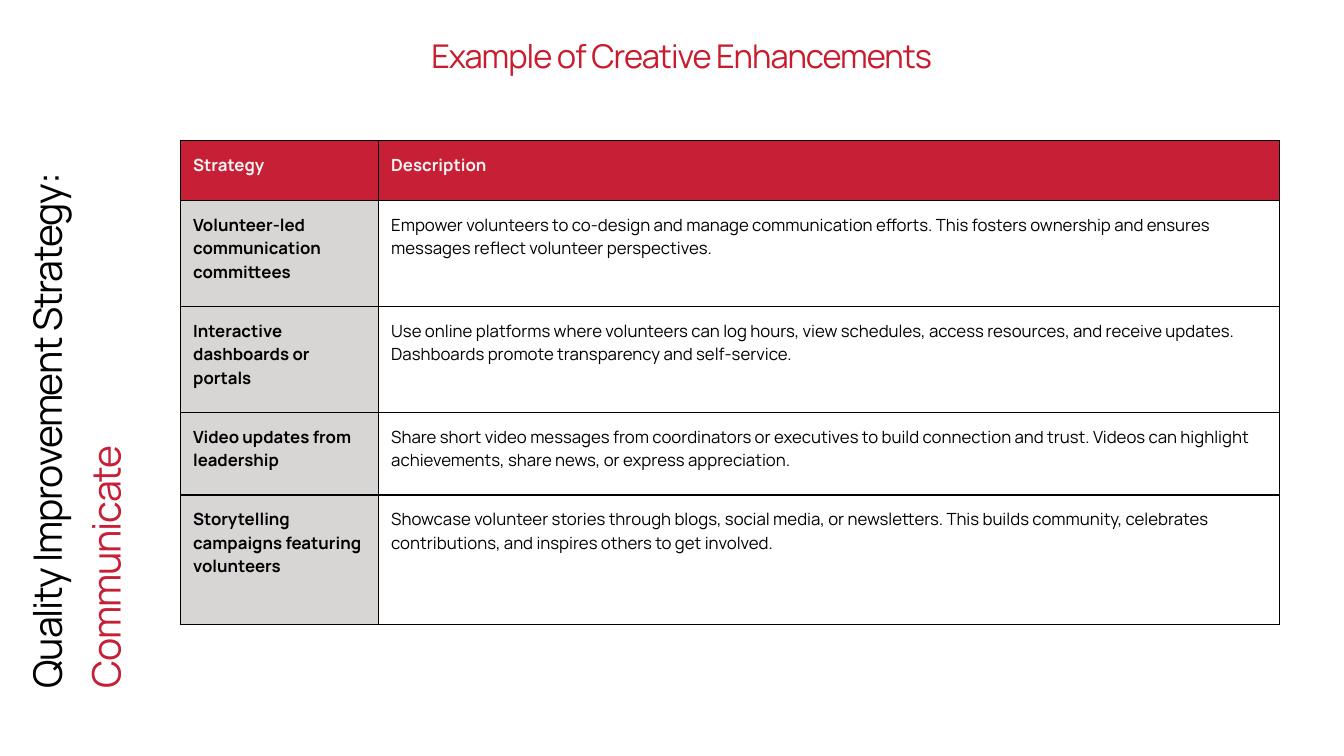
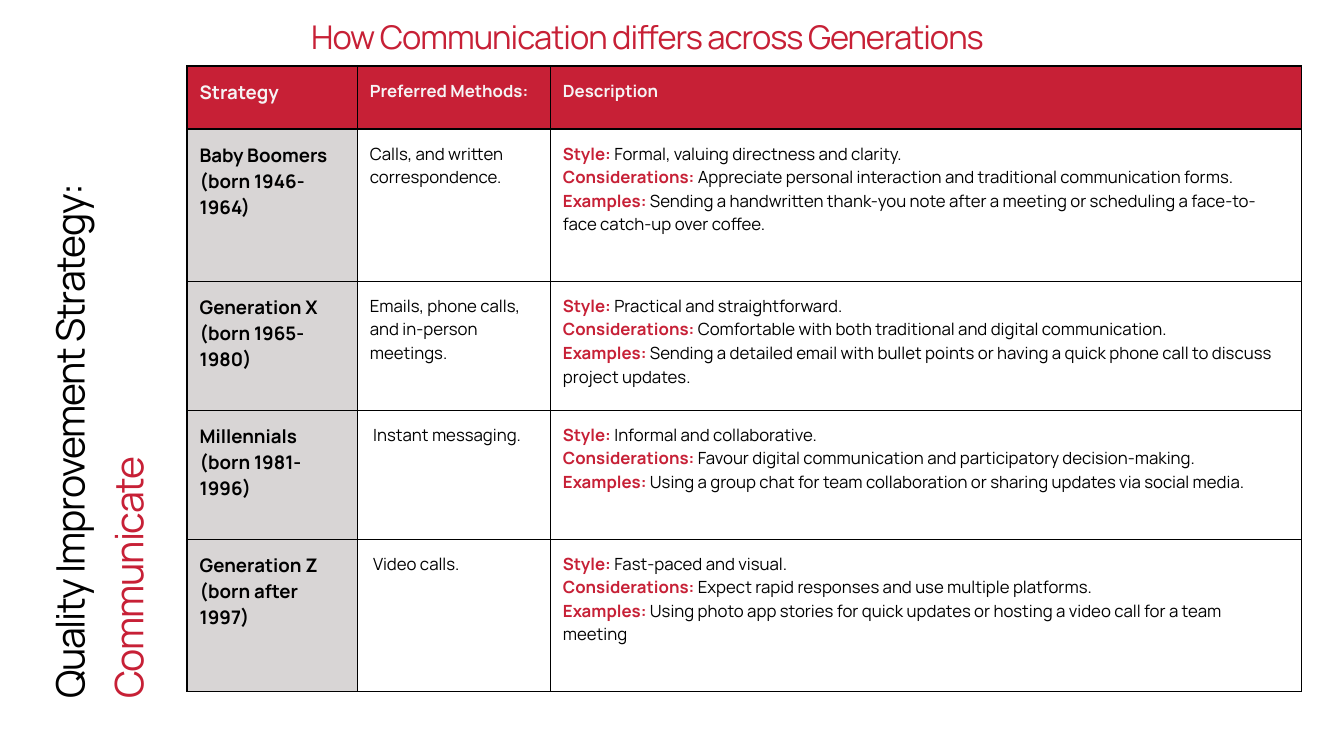
import pptx
import pptx.dml.color
import pptx.enum.text
import pptx.oxml
import pptx.oxml.ns
import pptx.util
from dataclasses import dataclass

Pt = pptx.util.Pt

# Content
SIDE_TITLE = ("Quality Improvement Strategy: ", "Communicate")
DETAIL_LABELS = ("Style: ", "Considerations: ", "Examples: ")

ENHANCEMENTS = [
    ("Strategy", "Description"),
    ("Volunteer-led communication committees",
     "Empower volunteers to co-design and manage communication efforts. "
     "This fosters ownership and ensures messages reflect volunteer perspectives."),
    ("Interactive dashboards or portals",
     "Use online platforms where volunteers can log hours, view schedules, access resources, "
     "and receive updates. Dashboards promote transparency and self-service."),
    ("Video updates from leadership",
     "Share short video messages from coordinators or executives to build connection and trust. "
     "Videos can highlight achievements, share news, or express appreciation."),
    ("Storytelling campaigns featuring volunteers",
     "Showcase volunteer stories through blogs, social media, or newsletters. "
     "This builds community, celebrates contributions, and inspires others to get involved."),
]

# A tuple in a cell holds one text per detail label
GENERATIONS = [
    ("Strategy", "Preferred Methods:", "Description"),
    ("Baby Boomers (born 1946-1964)", "Calls, and written correspondence.",
     ("Formal, valuing directness and clarity.",
      "Appreciate personal interaction and traditional communication forms.",
      "Sending a handwritten thank-you note after a meeting or scheduling "
      "a face-to-face catch-up over coffee.")),
    ("Generation X (born 1965-1980)", "Emails, phone calls, and in-person meetings.",
     ("Practical and straightforward.",
      "Comfortable with both traditional and digital communication.",
      "Sending a detailed email with bullet points or having a quick phone call "
      "to discuss project updates.")),
    ("Millennials (born 1981-1996)", " Instant messaging.",
     ("Informal and collaborative.",
      "Favour digital communication and participatory decision-making.",
      "Using a group chat for team collaboration or sharing updates via social media.")),
    ("Generation Z (born after 1997)", " Video calls.",
     ("Fast-paced and visual.",
      "Expect rapid responses and use multiple platforms.",
      "Using photo app stories for quick updates or hosting a video call for a team meeting")),
]

# Places in points: boxes are left, top, width, height
PAGES = [
    dict(title="Example of Creative Enhancements", title_color="C81C2C",
         title_box=(462.2, 35.3, 639.4, 91.4), side_box=(-235.4, 364.3, 620, 126),
         rows=ENHANCEMENTS, corner=(193.5, 150.5), first_size=18,
         widths=(212.2, 965.6), heights=(64, 113.7, 113.7, 88.4, 138.8)),
    dict(title="How Communication differs across Generations", title_color="C72036",
         title_box=(333.4, 14.4, 877, 46.8), side_box=(-210.2, 376.6, 618.5, 126),
         rows=GENERATIONS, corner=(200.4, 70.8), first_size=20,
         widths=(182.4, 206.9, 804.4), heights=(67.5, 163.2, 138.2, 138.2, 163.2)),
]


@dataclass(frozen=True)
class Theme:
    font: str = "Manrope"
    red: str = "C72036"
    gray: str = "D8D5D5"
    black: str = "000000"
    light: str = "F6F4F5"
    side_size: float = 42
    title_size: float = 35
    body_size: float = 18
    cell_leading: float = 1.4
    title_leading: float = 1.3
    side_leading: float = 1.5
    inset: float = 13.5
    border: float = 1.5


THEME = Theme()


def rgb(value):
    return pptx.dml.color.RGBColor.from_string(value)


def add_span(para, text, size, color, bold=False, tracking=None):
    span = para.add_run()
    span.text = text
    font = span.font
    font.name, font.size, font.bold = THEME.font, Pt(size), bold
    font.color.rgb = rgb(color)
    if tracking:
        span._r.get_or_add_rPr().set("spc", str(round(tracking * 100)))


def add_heading(page, place, spans, size, leading, tracking, rotation=0):
    box = page.shapes.add_textbox(*map(Pt, place))
    box.rotation = rotation
    frame = box.text_frame
    frame.word_wrap = True
    frame.auto_size = pptx.enum.text.MSO_AUTO_SIZE.SHAPE_TO_FIT_TEXT
    frame.margin_left = frame.margin_right = frame.margin_top = frame.margin_bottom = 0
    para = frame.paragraphs[0]
    para.line_spacing = Pt(size * leading)
    for text, color in spans:
        add_span(para, text, size, color, tracking=tracking)


def style_cell(cell, fill):
    cell.margin_left = cell.margin_right = Pt(THEME.inset)
    cell.margin_top = cell.margin_bottom = Pt(THEME.inset)
    # Borders come before the fill in the cell properties
    properties = cell._tc.get_or_add_tcPr()
    for side in ("lnL", "lnR", "lnT", "lnB"):
        properties.append(pptx.oxml.parse_xml(
            f'<a:{side} {pptx.oxml.ns.nsdecls("a")} w="{Pt(THEME.border)}">'
            f'<a:solidFill><a:srgbClr val="{THEME.black}"/></a:solidFill></a:{side}>'))
    if fill:
        cell.fill.solid()
        cell.fill.fore_color.rgb = rgb(fill)
    else:
        cell.fill.background()


def write_cell(cell, content, size, color, bold):
    if isinstance(content, tuple):
        lines = [[(label, THEME.red, True), (text, color, False)]
                 for label, text in zip(DETAIL_LABELS, content)]
    else:
        lines = [[(content, color, bold)]]
    frame = cell.text_frame
    for index, spans in enumerate(lines):
        para = frame.add_paragraph() if index else frame.paragraphs[0]
        para.line_spacing = Pt(size * THEME.cell_leading)
        for text, span_color, span_bold in spans:
            add_span(para, text, size, span_color, span_bold)


def add_strategy_table(page, rows, corner, widths, heights, first_size):
    place = (*corner, sum(widths), sum(heights))
    table = page.shapes.add_table(len(rows), len(widths), *map(Pt, place)).table
    table.first_row = table.horz_banding = False
    for column, width in zip(table.columns, widths):
        column.width = Pt(width)
    for row, height in zip(table.rows, heights):
        row.height = Pt(height)
    for r, row in enumerate(rows):
        for c, content in enumerate(row):
            header, first = r == 0, c == 0
            cell = table.cell(r, c)
            style_cell(cell, THEME.red if header else THEME.gray if first else None)
            write_cell(cell, content, first_size if first else THEME.body_size,
                       THEME.light if header else THEME.black, header or first)


def main():
    deck = pptx.Presentation()
    deck.slide_width, deck.slide_height = Pt(1440), Pt(810)
    for plan in PAGES:
        page = deck.slides.add_slide(deck.slide_layouts[6])
        add_strategy_table(page, plan["rows"], plan["corner"], plan["widths"],
                           plan["heights"], plan["first_size"])
        add_heading(page, plan["side_box"], zip(SIDE_TITLE, (THEME.black, THEME.red)),
                    THEME.side_size, THEME.side_leading, -1.3, rotation=270)
        add_heading(page, plan["title_box"], [(plan["title"], plan["title_color"])],
                    THEME.title_size, THEME.title_leading, -1.1)
    deck.save("out.pptx")


if __name__ == "__main__":
    main()
